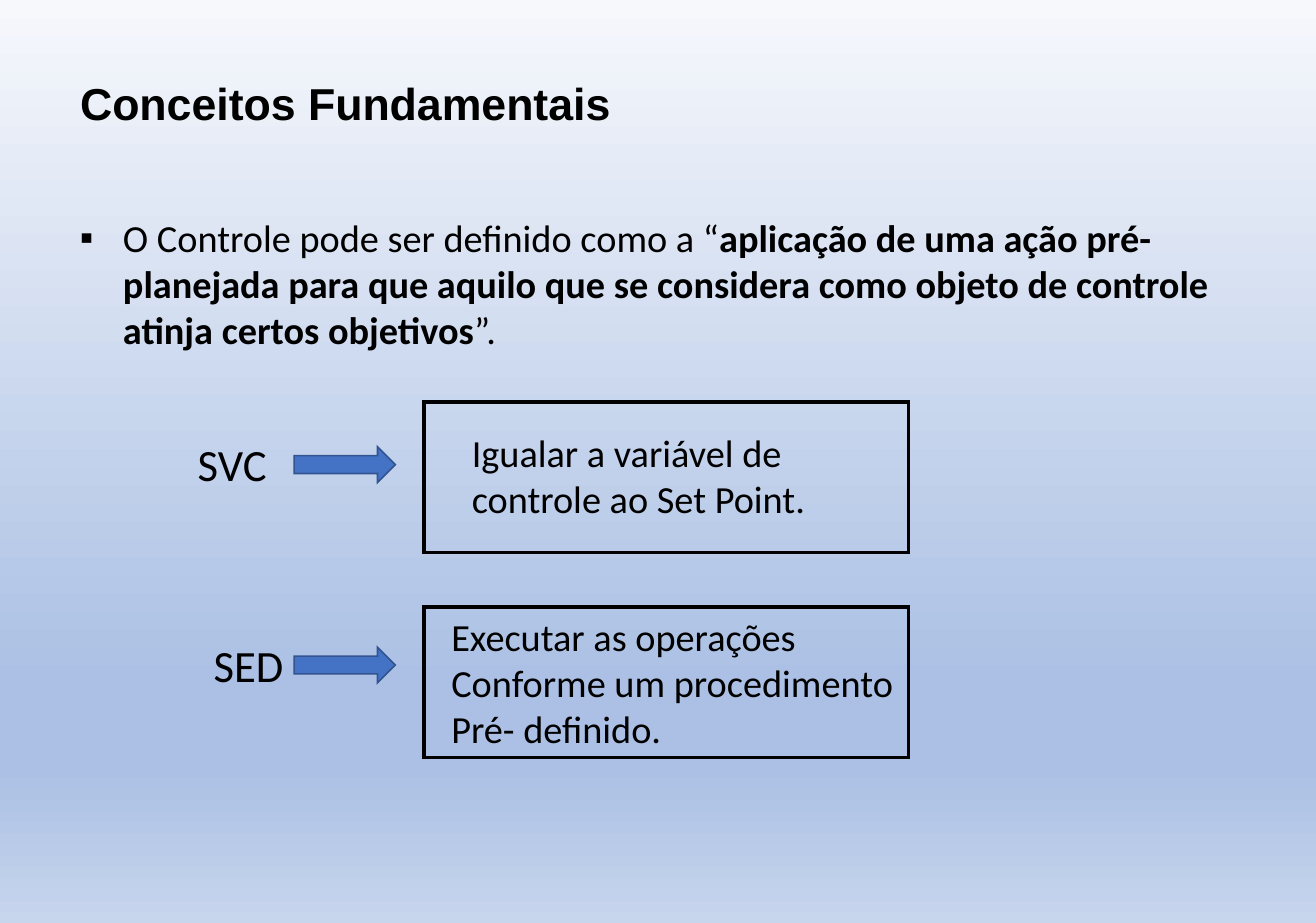
"""Build the slide on the fundamental concepts of control."""
from lxml import etree
from pptx import Presentation
from pptx.dml.color import RGBColor
from pptx.enum import shapes, text
from pptx.oxml.ns import qn
from pptx.util import Pt

TITLE = "Conceitos Fundamentais"
LEAD = [
    ("O Controle pode ser definido como a “", False),
    ("aplicação de uma ação pré-planejada para que aquilo que se considera "
     "como objeto de controle atinja certos objetivos", True),
    ("”.", False),
]
ROWS = [
    {"name": "SVC", "name_at": (116.9, 270.3), "arrow_top": 280, "box_top": 252,
     "goal": ["Igualar a variável de controle ao Set Point."],
     "goal_at": (288.7, 265.3, 237.6, 65.5)},
    {"name": "SED", "name_at": (126.9, 396.3), "arrow_top": 405.6, "box_top": 380.4,
     "goal": ["Executar as operações", "Conforme um procedimento", "Pré- definido."],
     "goal_at": (275.8, 380.9, 320.4, 94.3)},
]
STOPS = [(0, "F6F8FC"), (74, "ABC0E4"), (83, "ABC0E4"), (100, "C7D5ED")]
BLACK, BLUE, NAVY = "000000", "4472C4", "325491"
LEFT = 43


def color(code):
    return RGBColor.from_string(code)


def shade(slide):
    fill = slide.background.fill
    fill.gradient()
    fill.gradient_angle = 270
    stops = next(slide.element.iter(qn("a:gsLst")))
    for old in list(stops):
        stops.remove(old)
    for share, code in STOPS:
        stop = etree.SubElement(stops, qn("a:gs"), pos=str(share * 1000))
        etree.SubElement(stop, qn("a:srgbClr"), val=code)


def write(para, runs, size, font="Calibri"):
    para.alignment = text.PP_ALIGN.LEFT
    for words, bold in runs:
        run = para.add_run()
        run.text = words
        run.font.name, run.font.size, run.font.bold = font, Pt(size), bold
        run.font.color.rgb = color(BLACK)


def label(slide, place, paras, size):
    frame = slide.shapes.add_textbox(*map(Pt, place)).text_frame
    frame.word_wrap = True
    for i, runs in enumerate(paras):
        para = frame.add_paragraph() if i else frame.paragraphs[0]
        write(para, runs, size)
    return frame


def bullet(para, mark, indent):
    props = para._p.get_or_add_pPr()
    props.set("marL", str(Pt(indent)))
    props.set("indent", str(-Pt(indent)))
    etree.SubElement(props, qn("a:buFont"), typeface="Arial")
    etree.SubElement(props, qn("a:buChar"), char=mark)


def block(slide, kind, place, fill, line, width):
    shape = slide.shapes.add_shape(kind, *map(Pt, place))
    shape.shadow.inherit = False
    if fill:
        shape.fill.solid()
        shape.fill.fore_color.rgb = color(fill)
    else:
        shape.fill.background()
    shape.line.color.rgb = color(line)
    shape.line.width = Pt(width)
    edge = shape.element.spPr.find(qn("a:ln"))
    etree.SubElement(edge, qn("a:miter"), lim="800000")


def main():
    deck = Presentation()
    deck.slide_width, deck.slide_height = Pt(825), Pt(578.4)
    slide = deck.slides.add_slide(deck.slide_layouts[5])
    shade(slide)

    title = slide.shapes.title
    title.left, title.top, title.width, title.height = map(Pt, (LEFT, 43.9, 746.6, 41))
    frame = title.text_frame
    frame.auto_size = text.MSO_AUTO_SIZE.NONE
    frame.vertical_anchor = text.MSO_ANCHOR.TOP
    write(frame.paragraphs[0], [(TITLE, True)], 28, "Arial")

    lead = label(slide, (LEFT, 130.6, 726.5, 94.3), [LEAD], 24)
    bullet(lead.paragraphs[0], "▪", 27)

    kinds = shapes.MSO_SHAPE
    for row in ROWS:
        label(slide, (*row["name_at"], 149, 41), [[(row["name"], False)]], 28)
        block(slide, kinds.RIGHT_ARROW, (184.4, row["arrow_top"], 63.4, 22.3), BLUE, NAVY, 1)
        block(slide, kinds.RECTANGLE, (265.7, row["box_top"], 303.8, 94.3), None, BLACK, 2.25)
        label(slide, row["goal_at"], [[(words, False)] for words in row["goal"]], 24)

    deck.save("out.pptx")


if __name__ == "__main__":
    main()
